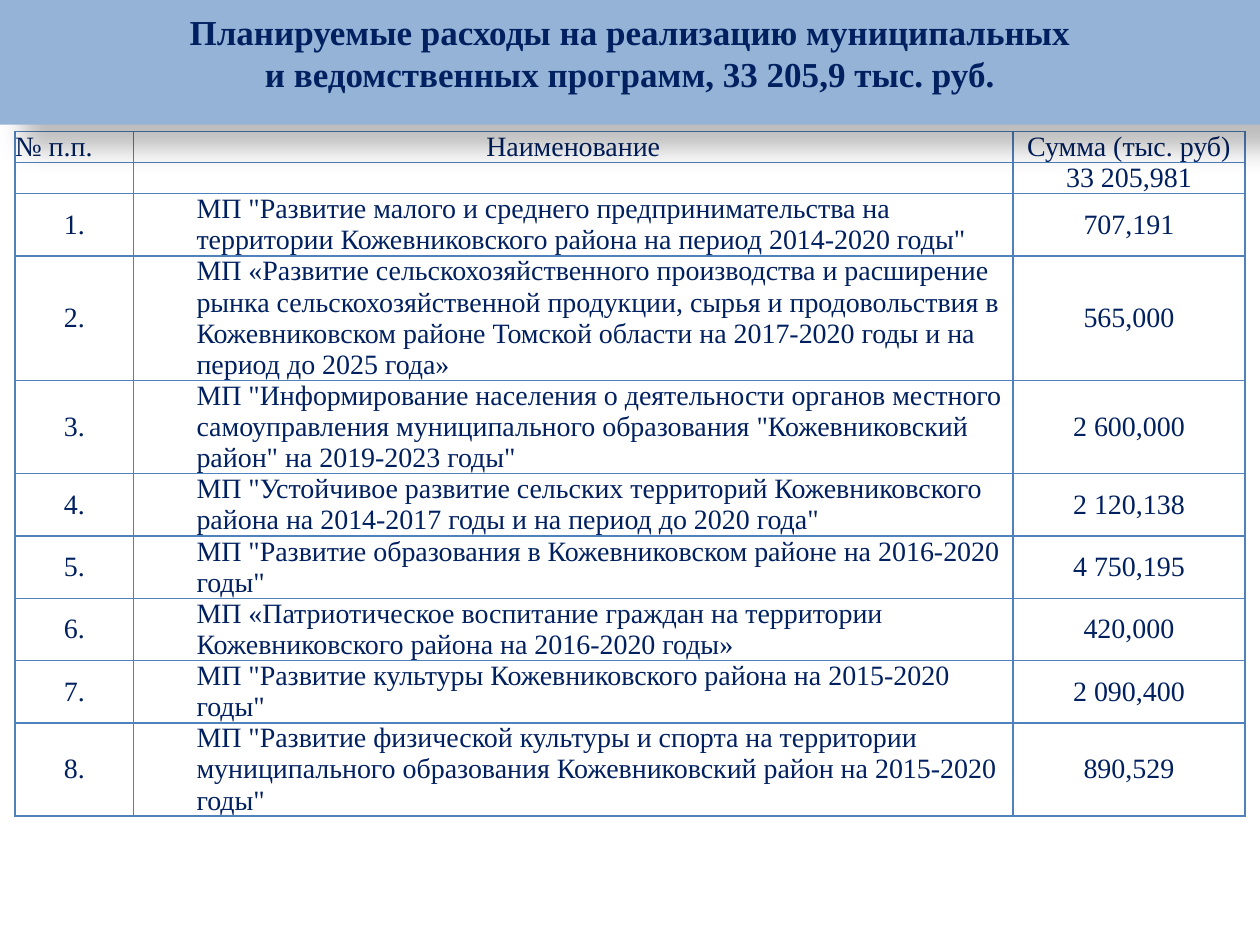
import dataclasses

import pptx
import pptx.dml.color
import pptx.enum.text
import pptx.oxml
import pptx.oxml.ns
import pptx.util

ALIGN = pptx.enum.text.PP_ALIGN
ANCHOR = pptx.enum.text.MSO_ANCHOR
NAMESPACE = pptx.oxml.ns.nsdecls("a")


@dataclasses.dataclass(frozen=True)
class Theme:
    font: str = "Times New Roman"
    text: str = "002060"
    banner: str = "95B3D7"
    border: str = "4F81BD"
    cell: str = "FFFFFF"
    title_size: int = 20
    table_size: int = 16


THEME = Theme()
TITLE_LINES = [
    "Планируемые расходы на реализацию муниципальных",
    "и ведомственных программ, 33 205,9 тыс. руб.",
]
HEADER = ["№ п.п.", "Наименование", "Сумма (тыс. руб)"]
TOTAL = "33 205,981"
PROGRAMS = [
    ('МП "Развитие малого и среднего предпринимательства на территории '
     'Кожевниковского района на период 2014-2020 годы"', "707,191"),
    ("МП «Развитие сельскохозяйственного производства и расширение рынка "
     "сельскохозяйственной продукции, сырья и продовольствия в Кожевниковском "
     "районе Томской области на 2017-2020 годы и на период до 2025 года»", "565,000"),
    ('МП "Информирование населения о деятельности органов местного самоуправления '
     'муниципального образования "Кожевниковский район" на 2019-2023 годы"', "2 600,000"),
    ('МП "Устойчивое развитие сельских территорий Кожевниковского района '
     'на 2014-2017 годы и на период до 2020 года"', "2 120,138"),
    ('МП "Развитие образования в Кожевниковском районе на 2016-2020 годы"', "4 750,195"),
    ("МП «Патриотическое воспитание граждан на территории Кожевниковского "
     "района на 2016-2020 годы»", "420,000"),
    ('МП "Развитие культуры Кожевниковского района на 2015-2020 годы"', "2 090,400"),
    ('МП "Развитие физической культуры и спорта на территории муниципального '
     'образования Кожевниковский район на 2015-2020 годы"', "890,529"),
]
# Table grid: column widths in inches, row heights in grid units
COLUMNS = [0.94, 6.98, 1.84]
ROW_UNITS = [2, 1, 4, 6, 5, 3, 3, 3, 2, 4]
ROW_UNIT = 0.11


def color(value):
    return pptx.dml.color.RGBColor.from_string(value)


def add_run(paragraph, text, size, bold=False):
    run = paragraph.add_run()
    run.text = text
    run.font.name = THEME.font
    run.font.size = pptx.util.Pt(size)
    run.font.bold = bold
    run.font.color.rgb = color(THEME.text)


def add_shadow(shape):
    """Soft shadow falling down and to the right."""
    shape._element.spPr.append(pptx.oxml.parse_xml(
        f'<a:effectLst {NAMESPACE}><a:outerShdw blurRad="{pptx.util.Pt(15)}" '
        f'dist="{pptx.util.Pt(18)}" dir="2700000" algn="tl" rotWithShape="0">'
        '<a:srgbClr val="000000"><a:alpha val="26000"/></a:srgbClr>'
        '</a:outerShdw></a:effectLst>'))


def format_title(slide, width, height):
    title = slide.shapes.title
    title.left, title.top = 0, 0
    title.width, title.height = width, int(height * 0.132)
    title.fill.solid()
    title.fill.fore_color.rgb = color(THEME.banner)
    title.line.fill.background()
    add_shadow(title)
    frame = title.text_frame
    frame.word_wrap = True
    frame.auto_size = pptx.enum.text.MSO_AUTO_SIZE.NONE
    frame.vertical_anchor = ANCHOR.TOP
    frame.margin_top = pptx.util.Inches(0.08)
    for index, line in enumerate(TITLE_LINES):
        paragraph = frame.paragraphs[0] if index == 0 else frame.add_paragraph()
        paragraph.alignment = ALIGN.CENTER
        paragraph.space_before = pptx.util.Pt(0)
        add_run(paragraph, line, THEME.title_size, bold=True)
    # The banner lies over the table so that its shadow falls on the header
    slide.shapes._spTree.append(title._element)


def add_borders(cell):
    properties = cell._tc.get_or_add_tcPr()
    for index, side in enumerate(("lnL", "lnR", "lnT", "lnB")):
        properties.insert(index, pptx.oxml.parse_xml(
            f'<a:{side} {NAMESPACE} w="{pptx.util.Pt(1)}"><a:solidFill>'
            f'<a:srgbClr val="{THEME.border}"/></a:solidFill></a:{side}>'))


def fill_cell(cell, text, alignment, indent=0):
    cell.margin_left = cell.margin_right = cell.margin_top = cell.margin_bottom = 0
    cell.vertical_anchor = ANCHOR.MIDDLE
    cell.fill.solid()
    cell.fill.fore_color.rgb = color(THEME.cell)
    add_borders(cell)
    paragraph = cell.text_frame.paragraphs[0]
    paragraph.alignment = alignment
    if indent:
        paragraph.level = 1
        properties = paragraph._p.get_or_add_pPr()
        properties.set("marL", str(pptx.util.Inches(indent)))
        properties.set("indent", "0")
    if text:
        add_run(paragraph, text, THEME.table_size)
    else:
        # An empty cell keeps the type size of the table
        paragraph._p.append(pptx.oxml.parse_xml(
            f'<a:endParaRPr {NAMESPACE} sz="{THEME.table_size * 100}">'
            f'<a:latin typeface="{THEME.font}"/></a:endParaRPr>'))


def add_program_table(slide, width, height):
    rows = [HEADER, ["", "", TOTAL]]
    rows += [[f"{number}.", name, amount]
             for number, (name, amount) in enumerate(PROGRAMS, 1)]
    table = slide.shapes.add_table(
        len(rows), len(COLUMNS), int(width * 0.012), int(height * 0.139),
        pptx.util.Inches(sum(COLUMNS)),
        pptx.util.Inches(sum(ROW_UNITS) * ROW_UNIT)).table
    table.first_row = table.horz_banding = False
    for column, column_width in zip(table.columns, COLUMNS):
        column.width = pptx.util.Inches(column_width)
    for row, units in zip(table.rows, ROW_UNITS):
        row.height = pptx.util.Inches(units * ROW_UNIT)
    for row_index, values in enumerate(rows):
        for column_index, text in enumerate(values):
            is_name = column_index == 1 and row_index > 1
            is_corner = row_index == column_index == 0
            alignment = ALIGN.LEFT if is_name or is_corner else ALIGN.CENTER
            fill_cell(table.cell(row_index, column_index), text, alignment,
                      indent=0.5 if is_name else 0)


def main():
    presentation = pptx.Presentation()
    presentation.slide_width = pptx.util.Inches(10)
    presentation.slide_height = pptx.util.Inches(7.5)
    size = presentation.slide_width, presentation.slide_height
    slide = presentation.slides.add_slide(presentation.slide_layouts[5])
    add_program_table(slide, *size)
    format_title(slide, *size)
    presentation.save("out.pptx")


if __name__ == "__main__":
    main()
